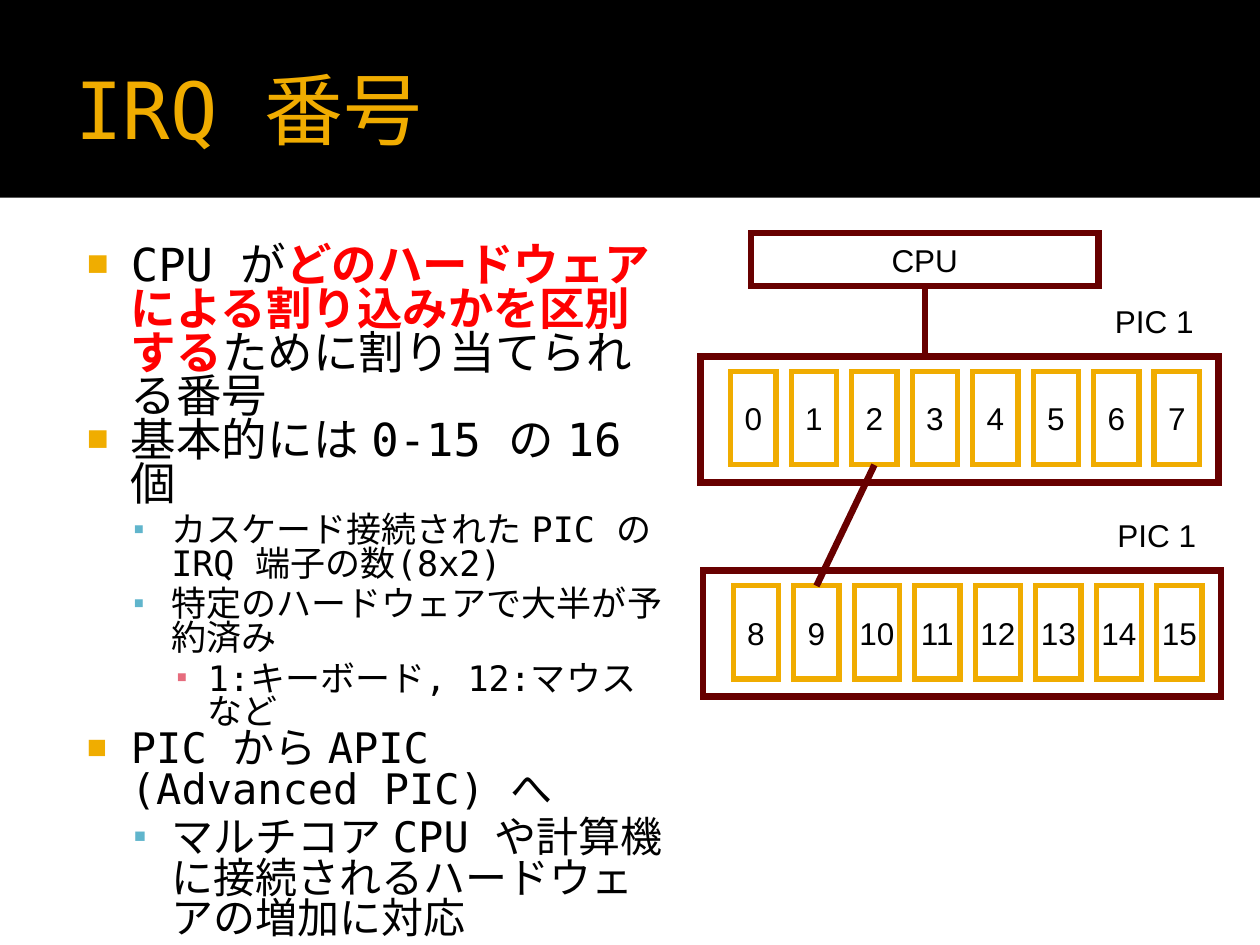
"""Build the slide on IRQ numbers with two cascaded PICs."""
from dataclasses import dataclass

import pptx
import pptx.util
import pptx.dml.color
import pptx.enum.lang
import pptx.enum.shapes
import pptx.enum.text
import pptx.oxml
import pptx.oxml.ns
from pptx.util import Inches


@dataclass(frozen=True)
class Theme:
    mono: str = "DejaVu Sans Mono"
    sans: str = "Arial"
    ink: str = "000000"
    gold: str = "F0AC00"
    alert: str = "FF0000"
    maroon: str = "680000"
    marks: tuple = ("F0AD00", "60B5CC", "E66C7D")
    title: float = 45
    label: float = 18
    big: float = 26
    mid: float = 24
    small: float = 20
    thick: float = 3.78
    thin: float = 3


LOOK = Theme()
TITLE = "IRQ 番号"
POINTS = [
    (0, LOOK.big, ["CPU が", "*どのハードウェアによる割り込みかを区別する",
                   "ために割り当てられる番号"]),
    (0, LOOK.big, ["基本的には 0-15 の 16 個"]),
    (1, LOOK.small, ["カスケード接続された PIC の IRQ 端子の数(8x2)"]),
    (1, LOOK.small, ["特定のハードウェアで大半が予約済み"]),
    (2, LOOK.small, ["1:キーボード, 12:マウス など"]),
    (0, LOOK.mid, ["PIC から APIC (Advanced PIC) へ"]),
    (1, LOOK.mid, ["マルチコア CPU や計算機に接続されるハードウェアの増加に対応"]),
]
LEVELS = [("■", 80, 0.48, -0.35), ("▪", 90, 0.8, -0.3), ("▪", 90, 1.09, -0.25)]
CHIPS = [("PIC 1", 5.56, 2.83, range(8)), ("PIC 1", 5.58, 4.53, range(8, 16))]
PITCH = 0.48

ANCHOR = pptx.enum.text.MSO_ANCHOR
ALIGN = pptx.enum.text.PP_ALIGN
RECT = pptx.enum.shapes.MSO_SHAPE.RECTANGLE
STRAIGHT = pptx.enum.shapes.MSO_CONNECTOR.STRAIGHT


def rgb(code):
    return pptx.dml.color.RGBColor.from_string(code)


def node(tag, **attrs):
    item = pptx.oxml.parse_xml(f"<{tag} {pptx.oxml.ns.nsdecls('a')}/>")
    for key, value in attrs.items():
        item.set(key, str(value))
    return item


def write(para, text, size=LOOK.label, face=LOOK.sans, color=LOOK.ink,
          bold=False, align=None):
    run = para.add_run()
    run.text = text
    font = run.font
    font.size = pptx.util.Pt(size)
    font.bold = bold
    font.color.rgb = rgb(color)
    font.name = face
    font.language_id = pptx.enum.lang.MSO_LANGUAGE_ID.JAPANESE
    run._r.get_or_add_rPr().append(node("a:ea", typeface=LOOK.sans))
    if align is not None:
        para.alignment = align


def frame(shapes, spot, pads, anchor=ANCHOR.TOP, wrap=True):
    body = shapes.add_textbox(*map(Inches, spot)).text_frame
    body.word_wrap = wrap
    if not wrap:
        body.auto_size = pptx.enum.text.MSO_AUTO_SIZE.SHAPE_TO_FIT_TEXT
    body.vertical_anchor = anchor
    (body.margin_left, body.margin_top,
     body.margin_right, body.margin_bottom) = map(Inches, pads)
    return body


def box(shapes, spot, line=None, width=LOOK.thick, fill=None, text=None):
    shape = shapes.add_shape(RECT, *map(Inches, spot))
    shape.shadow.inherit = False
    if fill:
        shape.fill.solid()
        shape.fill.fore_color.rgb = rgb(fill)
    else:
        shape.fill.background()
    if line:
        shape.line.color.rgb = rgb(line)
        shape.line.width = pptx.util.Pt(width)
        shape.line._get_or_add_ln().append(node("a:miter", lim=800000))
    else:
        shape.line.fill.background()
    if text:
        body = shape.text_frame
        body.word_wrap = False
        body.vertical_anchor = ANCHOR.MIDDLE
        write(body.paragraphs[0], text, align=ALIGN.CENTER)
    return shape


def wire(shapes, start, end):
    line = shapes.add_connector(STRAIGHT, *map(Inches, start + end))
    line.line.color.rgb = rgb(LOOK.maroon)
    line.line.width = pptx.util.Pt(LOOK.thick)
    line._element.spPr.append(node("a:effectLst"))
    return line


def outline(body):
    for index, (level, size, parts) in enumerate(POINTS):
        para = body.paragraphs[0] if index == 0 else body.add_paragraph()
        mark, scale, left, hang = LEVELS[level]
        para.level = level
        para.line_spacing = 0.8
        props = para._p.get_or_add_pPr()
        props.set("marL", str(Inches(left)))
        props.set("indent", str(Inches(hang)))
        if level:
            before = node("a:spcBef")
            before.append(node("a:spcPct", val=20000))
            props.append(before)
        tint = node("a:buClr")
        tint.append(node("a:srgbClr", val=LOOK.marks[level]))
        for item in (tint, node("a:buSzPct", val=scale * 1000),
                     node("a:buFont", typeface=LOOK.sans),
                     node("a:buChar", char=mark)):
            props.append(item)
        for part in parts:
            key = part.startswith("*")
            write(para, part.lstrip("*"), size=size, face=LOOK.mono, bold=key,
                  color=LOOK.alert if key else LOOK.ink)


def main():
    deck = pptx.Presentation()
    deck.slide_width, deck.slide_height = Inches(10), Inches(7.5)
    shapes = deck.slides.add_slide(deck.slide_layouts[6]).shapes

    box(shapes, (0, 0, 10, 1.57), fill=LOOK.ink)
    head = frame(shapes, (0.5, 0.17, 9, 1.37), (0.1, 0.05, 0.05, 0.05), ANCHOR.MIDDLE)
    write(head.paragraphs[0], TITLE, size=LOOK.title, face=LOOK.mono, color=LOOK.gold)
    outline(frame(shapes, (0.5, 1.86, 4.96, 6.1), (0.06, 0.1, 0.15, 0.05)))

    slots = []
    for name, left, top, pins in CHIPS:
        box(shapes, (left, top, 4.11, 1), LOOK.maroon)
        label = frame(shapes, (left + 3.19, top - 0.48, 0.82, 0.4),
                      (0.1, 0.05, 0.05, 0.05), wrap=False)
        write(label.paragraphs[0], name)
        for step, pin in enumerate(pins):
            spot = (left + 0.24 + step * PITCH, top + 0.12, 0.36, 0.74)
            slots.append(box(shapes, spot, LOOK.gold, LOOK.thin, text=str(pin)))

    link = wire(shapes, (6.5, 4.63), (6.94, 3.69))
    link.begin_connect(slots[9], 0)
    link.end_connect(slots[2], 2)
    cpu = box(shapes, (5.96, 1.85, 2.76, 0.42), LOOK.maroon, text="CPU")
    wire(shapes, (7.34, 2.27), (7.34, 2.83)).begin_connect(cpu, 2)
    deck.save("out.pptx")


if __name__ == "__main__":
    main()
